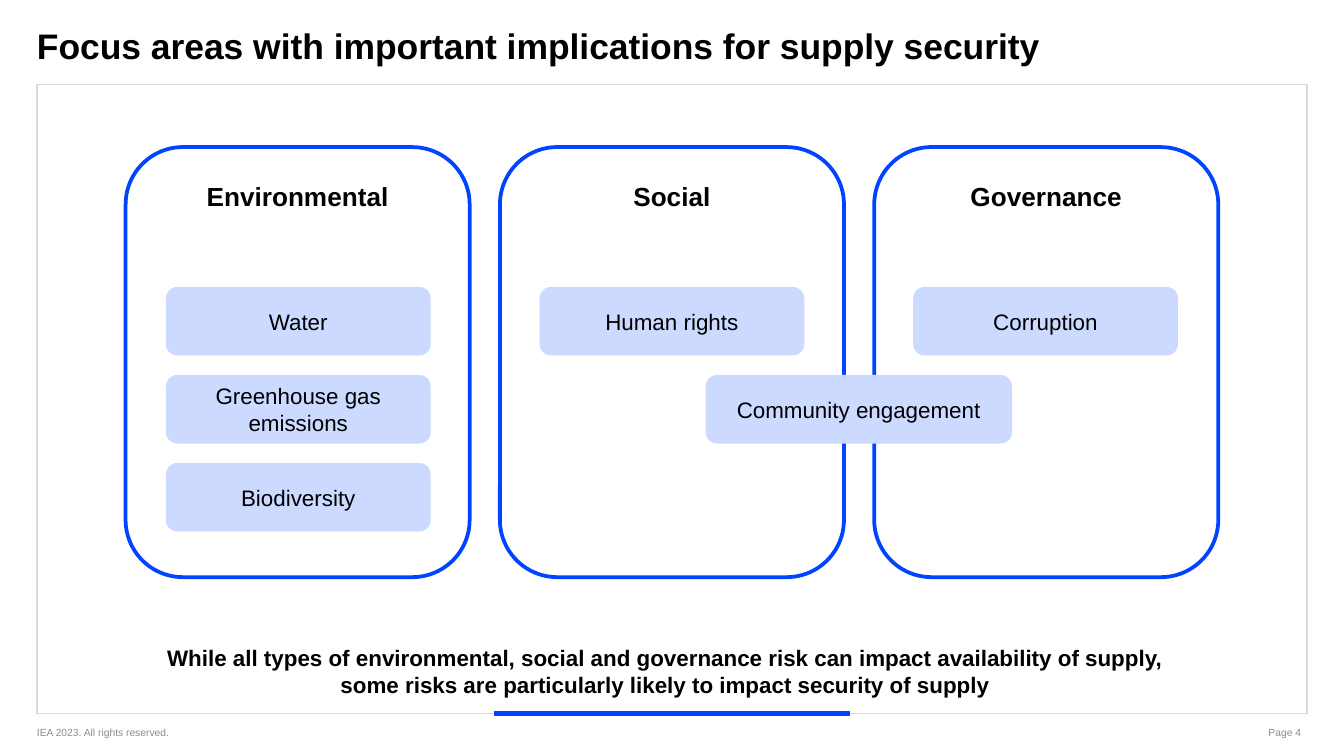
"""Build the slide on focus areas for supply security."""
from dataclasses import dataclass

from pptx import Presentation
from pptx import util as u
from pptx.dml.color import RGBColor
from pptx.enum import shapes, text

PX = 4572
COLORS = {"blue": "0044FF", "pale": "CCDAFF", "white": "FFFFFF",
          "black": "000000", "grey": "8C8C8C", "frame": "D9D9D9"}
COLUMN_LEFT, COLUMN_PITCH = 187, 557
TOPIC_LEFT, TOPIC_PITCH = 247, 556
ROW_TOP, ROW_PITCH = 427, 131
ALIGN = text.PP_ALIGN
ANCHOR = text.MSO_ANCHOR
KIND = shapes.MSO_SHAPE


@dataclass(frozen=True)
class Box:
    left: int
    top: int
    width: int
    height: int

    def emu(self) -> tuple:
        return tuple(u.Emu(side * PX) for side in (self.left, self.top, self.width, self.height))


@dataclass(frozen=True)
class Style:
    size: float
    bold: bool = False
    color: str = "black"
    align: ALIGN = ALIGN.CENTER
    anchor: ANCHOR = ANCHOR.MIDDLE
    insets: tuple = (20, 10, 20, 10)


@dataclass(frozen=True)
class Pillar:
    name: str
    topics: tuple


TITLE = Style(19, True, align=ALIGN.LEFT, anchor=ANCHOR.TOP, insets=(0, 0, 0, 0))
HEADING = Style(14, True, anchor=ANCHOR.TOP, insets=(20, 24, 20, 10))
TOPIC = Style(12)
MESSAGE = Style(12, True, insets=(0, 0, 20, 16))
FOOTER = Style(5.5, color="grey", align=ALIGN.LEFT, insets=(0, 10, 20, 10))
PAGE_NUMBER = Style(5.5, color="grey", align=ALIGN.RIGHT, insets=(0, 10, 20, 10))

PILLARS = (
    Pillar("Environmental", ("Water", "Greenhouse gas emissions", "Biodiversity")),
    Pillar("Social", ("Human rights",)),
    Pillar("Governance", ("Corruption",)),
)


def rgb(name: str) -> RGBColor:
    return RGBColor.from_string(COLORS[name])


def write(shape, lines: tuple, style: Style) -> None:
    frame = shape.text_frame
    frame.word_wrap = True
    frame.auto_size = text.MSO_AUTO_SIZE.NONE
    frame.vertical_anchor = style.anchor
    (frame.margin_left, frame.margin_top,
     frame.margin_right, frame.margin_bottom) = (u.Emu(side * PX) for side in style.insets)
    for index, line in enumerate(lines):
        para = frame.add_paragraph() if index else frame.paragraphs[0]
        para.alignment = style.align
        para.space_before = u.Pt(0)
        span = para.add_run()
        span.text = line
        span.font.name = "Arial"
        span.font.size = u.Pt(style.size)
        span.font.bold = style.bold
        span.font.color.rgb = rgb(style.color)


def add_text(page, box: Box, lines: tuple, style: Style) -> None:
    write(page.shapes.add_textbox(*box.emu()), lines, style)


def add_panel(page, kind: KIND, box: Box, fill: str = "", line: str = "", weight: float = 0):
    panel = page.shapes.add_shape(kind, *box.emu())
    panel.shadow.inherit = False
    if fill:
        panel.fill.solid()
        panel.fill.fore_color.rgb = rgb(fill)
    else:
        panel.fill.background()
    if line:
        panel.line.color.rgb = rgb(line)
        panel.line.width = u.Pt(weight)
    else:
        panel.line.fill.background()
    return panel


def add_topic(page, name: str, left: int, row: int, width: int = 394) -> None:
    box = Box(left, ROW_TOP + row * ROW_PITCH, width, 102)
    write(add_panel(page, KIND.ROUNDED_RECTANGLE, box, "pale"), (name,), TOPIC)


def add_pillar(page, pillar: Pillar, column: int) -> None:
    box = Box(COLUMN_LEFT + column * COLUMN_PITCH, 219, 512, 640)
    panel = add_panel(page, KIND.ROUNDED_RECTANGLE, box, "white", "blue", 2)
    write(panel, (pillar.name,), HEADING)
    for row, name in enumerate(pillar.topics):
        add_topic(page, name, TOPIC_LEFT + column * TOPIC_PITCH, row)


def main() -> None:
    deck = Presentation()
    deck.slide_width, deck.slide_height = u.Emu(2000 * PX), u.Emu(1125 * PX)
    page = deck.slides.add_slide(deck.slide_layouts[5])

    title = page.shapes.title
    title.left, title.top, title.width, title.height = Box(55, 36, 1748, 86).emu()
    write(title, ("Focus areas with important implications for supply security",), TITLE)

    add_text(page, Box(55, 1070, 266, 40), ("IEA 2023. All rights reserved.",), FOOTER)
    add_text(page, Box(1690, 1070, 266, 40), ("Page 4",), PAGE_NUMBER)
    add_panel(page, KIND.RECTANGLE, Box(55, 126, 1890, 936), line="frame", weight=0.75)
    add_panel(page, KIND.RECTANGLE, Box(736, 1059, 528, 6), "blue", "blue", 0.5)
    add_text(page, Box(55, 958, 1890, 96), (
        "While all types of environmental, social and governance risk can impact availability of supply,",
        "some risks are particularly likely to impact security of supply"), MESSAGE)

    for column, pillar in enumerate(PILLARS):
        add_pillar(page, pillar, column)
    add_topic(page, "Community engagement", 1050, 1, 456)

    deck.save("out.pptx")


if __name__ == "__main__":
    main()
